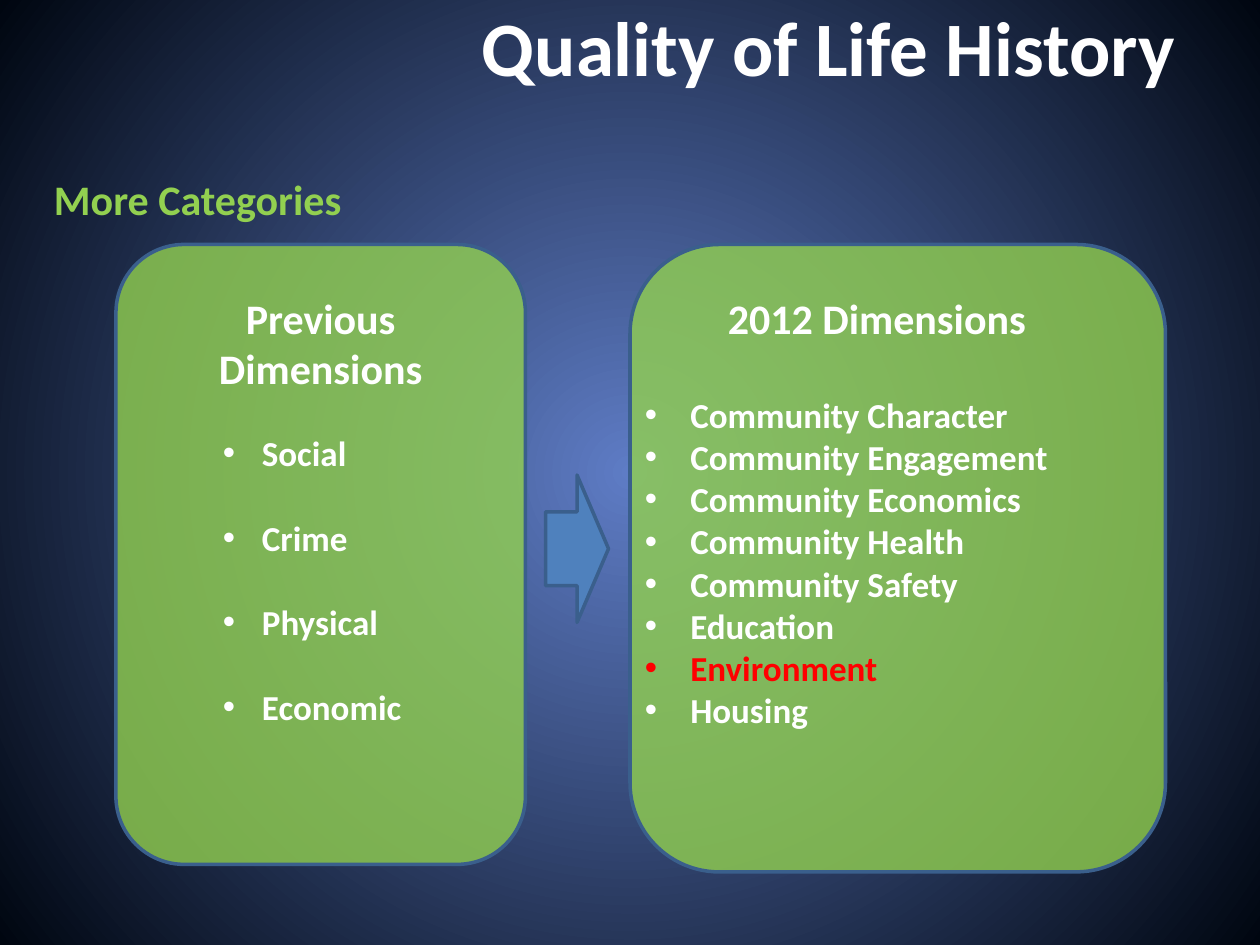
from pptx import Presentation
from pptx.dml.color import RGBColor
from pptx.enum import shapes, text
from pptx.oxml import parse_xml
from pptx.oxml.ns import nsdecls, qn
from pptx.util import Inches, Pt

FONT = "Calibri"
COLORS = {
    "glow": "5E7CC5",
    "night": "000610",
    "green": "92D050",
    "blue": "4F81BD",
    "outline": "3A5F8C",
    "white": "FFFFFF",
    "red": "FF0000",
}
PREVIOUS = ["Social", "Crime", "Physical", "Economic"]
CURRENT = [
    "Community Character",
    "Community Engagement",
    "Community Economics",
    "Community Health",
    "Community Safety",
    "Education",
    "Environment",
    "Housing",
]


def rgb(name):
    return RGBColor.from_string(COLORS[name])


def set_background(page):
    """Fill the page with a gradient that spreads from its centre."""
    fill = page.background.fill
    fill.gradient()
    for stop, name in zip(fill.gradient_stops, ("glow", "night")):
        stop.color.rgb = rgb(name)
    gradient = page.element.find(".//" + qn("a:gradFill"))
    linear = gradient.find(qn("a:lin"))
    circle = parse_xml(
        f'<a:path {nsdecls("a")} path="circle">'
        '<a:fillToRect l="50000" t="50000" r="50000" b="50000"/></a:path>'
    )
    gradient.replace(linear, circle)


def add_shape(page, kind, bounds, color, opacity=100):
    shape = page.shapes.add_shape(kind, *map(Inches, bounds))
    shape.shadow.inherit = False
    shape.fill.solid()
    shape.fill.fore_color.rgb = rgb(color)
    shape.line.color.rgb = rgb("outline")
    shape.line.width = Pt(2)
    if opacity < 100:
        fill_color = shape.element.spPr.find(qn("a:solidFill"))[0]
        alpha = parse_xml(f'<a:alpha {nsdecls("a")} val="{opacity * 1000}"/>')
        fill_color.append(alpha)


def add_text_box(page, bounds):
    box = page.shapes.add_textbox(*map(Inches, bounds))
    box.text_frame.word_wrap = True
    return box.text_frame


def add_para(frame, words, size, color="white", align=text.PP_ALIGN.LEFT):
    para = frame.paragraphs[0]
    if para.runs:
        para = frame.add_paragraph()
    para.alignment = align
    span = para.add_run()
    span.text = words
    span.font.name = FONT
    span.font.size = Pt(size)
    span.font.bold = True
    span.font.color.rgb = rgb(color)
    return para


def set_bullet(para, margin, hanging):
    props = para._p.get_or_add_pPr()
    props.set("marL", str(Inches(margin)))
    props.set("indent", str(-Inches(hanging)))
    props.append(parse_xml(f'<a:buFont {nsdecls("a")} typeface="Arial"/>'))
    props.append(parse_xml(f'<a:buChar {nsdecls("a")} char="•"/>'))


def add_dimensions(page, bounds, heading, heading_gap, items, item_gap, indents):
    """Add a centred heading of one or more lines above a bulleted list."""
    frame = add_text_box(page, bounds)
    for line in heading:
        para = add_para(frame, line, 24, align=text.PP_ALIGN.CENTER)
    para.space_after = Pt(heading_gap)
    for item in items:
        color = "red" if item == "Environment" else "white"
        para = add_para(frame, item, 20, color)
        if item != items[-1]:
            para.space_after = Pt(item_gap)
        set_bullet(para, *indents)


def main():
    deck = Presentation()
    deck.slide_width, deck.slide_height = Inches(10), Inches(7.5)
    page = deck.slides.add_slide(deck.slide_layouts[6])
    set_background(page)

    panel = shapes.MSO_SHAPE.ROUNDED_RECTANGLE
    add_shape(page, panel, (0.92, 1.94, 3.25, 4.92), "green", opacity=80)
    add_dimensions(page, (1.17, 2.27, 2.75, 3.57), ["Previous", "Dimensions"], 22,
                   PREVIOUS, 24.4, (0.81, 0.31))
    add_shape(page, panel, (5, 1.94, 4.25, 4.98), "green", opacity=80)
    add_dimensions(page, (4.75, 2.27, 4.42, 4.21), ["2012 Dimensions"], 29.3,
                   CURRENT, 0, (0.63, 0.36))
    add_shape(page, shapes.MSO_SHAPE.RIGHT_ARROW, (4.33, 3.77, 0.5, 1.17), "blue")

    subtitle = add_text_box(page, (0.33, 1.33, 4.08, 0.51))
    add_para(subtitle, "More Categories", 24, "green")
    title = add_text_box(page, (2.17, 0, 7.26, 0.83))
    title.margin_top = 0
    add_para(title, "Quality of Life History", 44, align=text.PP_ALIGN.RIGHT)

    deck.save("out.pptx")


if __name__ == "__main__":
    main()
